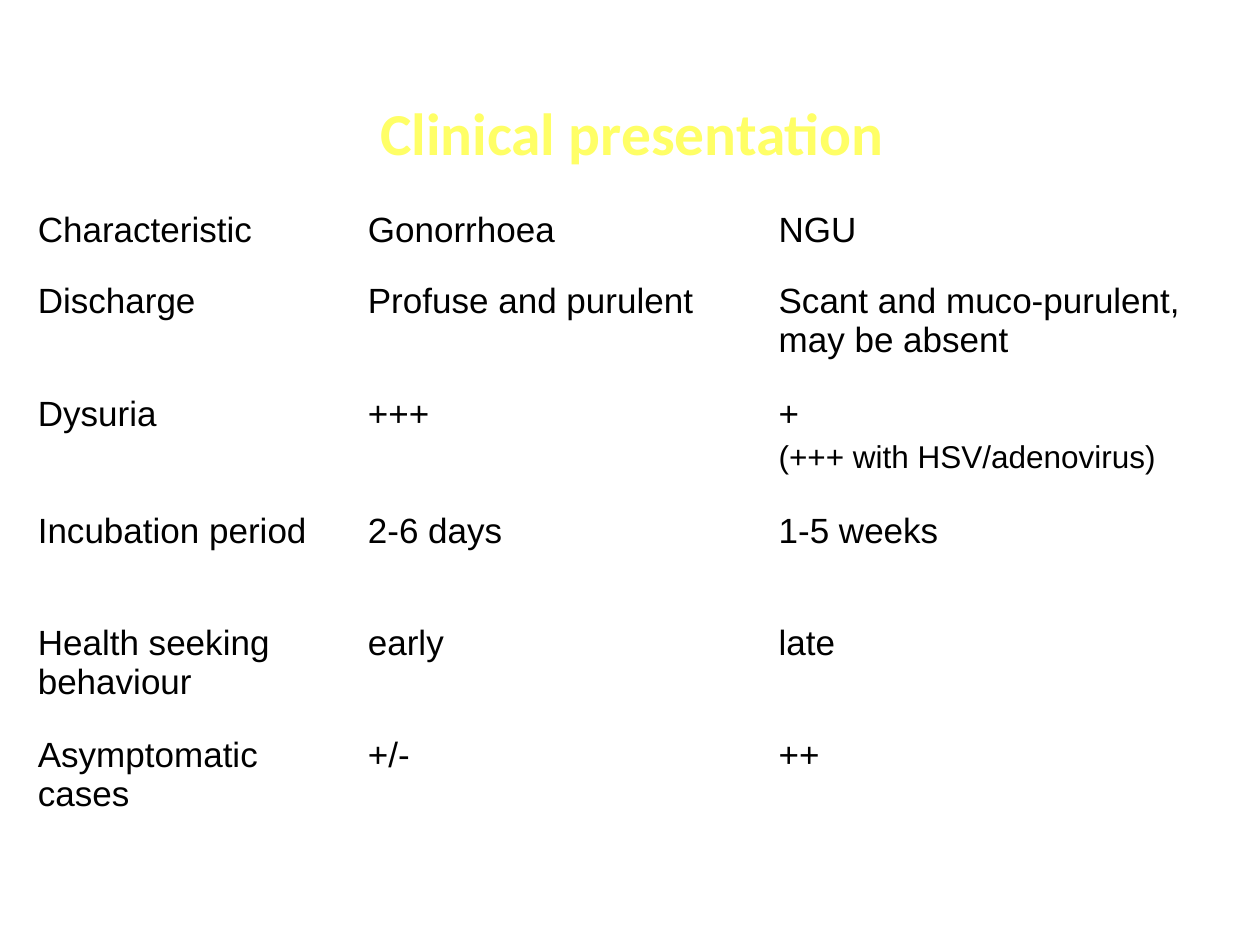
from dataclasses import dataclass

from lxml.etree import SubElement
from pptx import Presentation
from pptx.dml.color import RGBColor as Rgb
from pptx.enum.text import MSO_ANCHOR as Anchor, PP_ALIGN as Align
from pptx.oxml.ns import qn
from pptx.util import Inches, Pt


@dataclass(frozen=True)
class Theme:
    title_font: str = "Calibri"
    body_font: str = "Arial"
    title_color: str = "FFFF66"
    text_color: str = "000000"
    border_color: str = "FFFFFF"
    title_size: int = 34
    body_size: int = 20
    note_size: int = 18
    border_width: int = 1
    space_ratio: float = 0.2


@dataclass(frozen=True)
class Feature:
    name: str
    gonorrhoea: str
    ngu: str
    height: float = 0.89
    ngu_note: str = ""


THEME = Theme()
COLUMN_WIDTHS = (2.62, 3.26, 3.71)
FEATURES = (
    Feature("Characteristic", "Gonorrhoea", "NGU", height=0.57),
    Feature("Discharge", "Profuse and purulent", "Scant and muco-purulent, may be absent"),
    Feature("Dysuria", "+++", "+", height=0.93, ngu_note="(+++ with HSV/adenovirus)"),
    Feature("Incubation period", "2-6 days", "1-5 weeks"),
    Feature("Health seeking behaviour", "early", "late"),
    Feature("Asymptomatic cases", "+/-", "++"),
)


def format_font(font, color: str, **values) -> None:
    for attribute, value in values.items():
        setattr(font, attribute, value)
    font.color.rgb = Rgb.from_string(color)


def add_title(slide, wording: str) -> None:
    title = slide.shapes.title
    box = {"left": 0.78, "top": 0.42, "width": 8.47, "height": 1.25}
    for attribute, length in box.items():
        setattr(title, attribute, Inches(length))
    frame = title.text_frame
    frame.text = wording
    frame.vertical_anchor = Anchor.MIDDLE
    heading = frame.paragraphs[0]
    heading.alignment = Align.CENTER
    format_font(heading.runs[0].font, THEME.title_color, name=THEME.title_font,
                size=Pt(THEME.title_size), bold=True)


def write_line(paragraph, wording: str, size: int) -> None:
    paragraph.alignment = Align.LEFT
    paragraph.space_before = Pt(size * THEME.space_ratio)
    run = paragraph.add_run()
    run.text = wording
    format_font(run.font, THEME.text_color, name=THEME.body_font, size=Pt(size), bold=False)


def add_borders(cell) -> None:
    properties = cell._tc.get_or_add_tcPr()
    for position, side in enumerate(("lnL", "lnR", "lnT", "lnB")):
        line = properties.makeelement(qn(f"a:{side}"), {"w": str(Pt(THEME.border_width))})
        fill = SubElement(line, qn("a:solidFill"))
        SubElement(fill, qn("a:srgbClr"), val=THEME.border_color)
        properties.insert(position, line)  # borders precede the cell fill


def fill_cell(cell, wording: str, note: str = "") -> None:
    cell.fill.background()
    add_borders(cell)
    frame = cell.text_frame
    write_line(frame.paragraphs[0], wording, THEME.body_size)
    if note:
        write_line(frame.add_paragraph(), note, THEME.note_size)


def add_comparison(slide) -> None:
    total_height = sum(feature.height for feature in FEATURES)
    table = slide.shapes.add_table(
        len(FEATURES), len(COLUMN_WIDTHS), Inches(0.2), Inches(1.62),
        Inches(sum(COLUMN_WIDTHS)), Inches(total_height)).table
    for option in ("first_row", "horz_banding"):
        setattr(table, option, False)
    for column, width in zip(table.columns, COLUMN_WIDTHS):
        column.width = Inches(width)
    for row, feature in zip(table.rows, FEATURES):
        row.height = Inches(feature.height)
        name, gonorrhoea, ngu = row.cells
        fill_cell(name, feature.name)
        fill_cell(gonorrhoea, feature.gonorrhoea)
        fill_cell(ngu, feature.ngu, feature.ngu_note)


def main() -> None:
    deck = Presentation()
    deck.slide_width, deck.slide_height = Inches(10), Inches(7.5)
    slide = deck.slides.add_slide(deck.slide_layouts[5])
    add_title(slide, "Clinical presentation")
    add_comparison(slide)
    deck.save("out.pptx")


if __name__ == "__main__":
    main()
